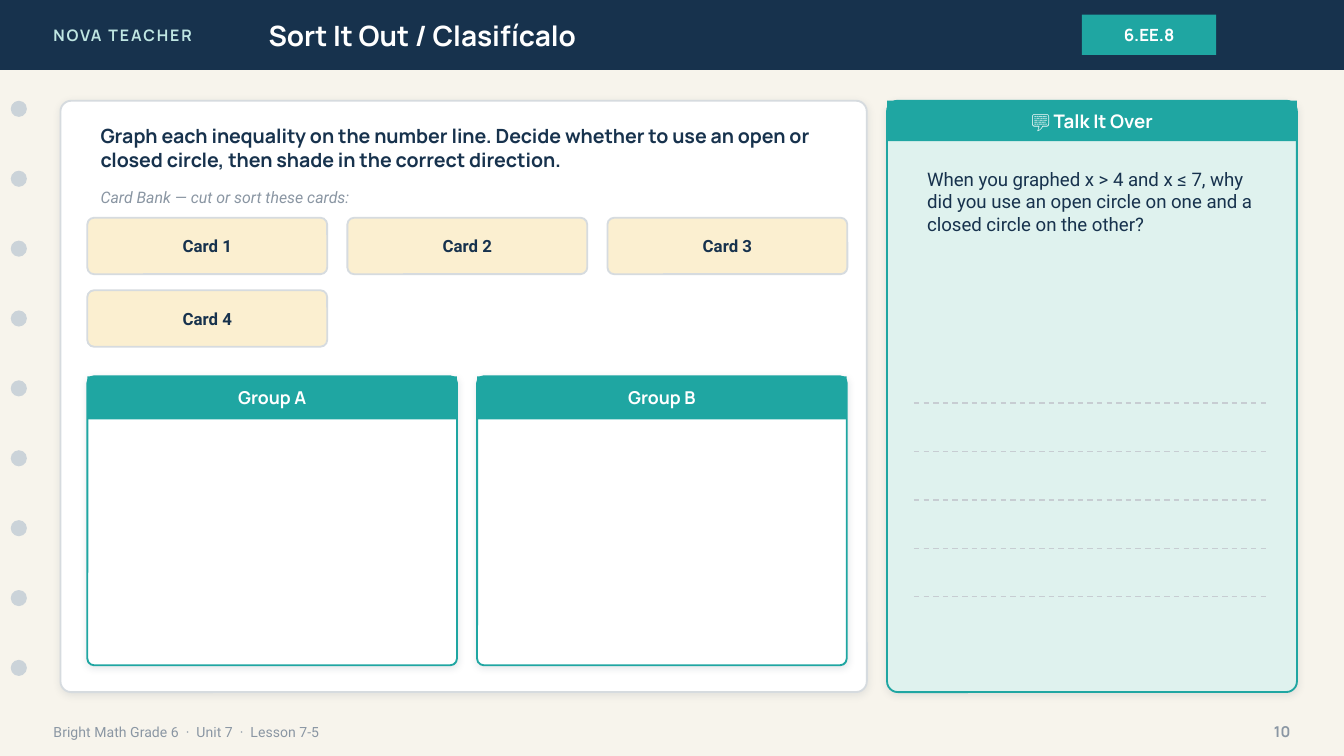
from lxml import etree
from pptx import Presentation
from pptx.dml.color import RGBColor
from pptx.enum.dml import MSO_LINE
from pptx.enum.shapes import MSO_CONNECTOR, MSO_SHAPE
from pptx.enum.text import MSO_ANCHOR, PP_ALIGN
from pptx.oxml import parse_xml
from pptx.oxml.ns import nsdecls, qn
from pptx.util import Pt

PX = 4572  # 200 px to the inch

NAVY = RGBColor(0x17, 0x32, 0x4D)
TEAL = RGBColor(0x1F, 0xA6, 0xA2)
MINT = RGBColor(0xDF, 0xF2, 0xEE)
PALE_TEAL = RGBColor(0xBF, 0xE6, 0xE2)
CREAM = RGBColor(0xF7, 0xF4, 0xEC)
SAND = RGBColor(0xFB, 0xEF, 0xD0)
WHITE = RGBColor(0xFF, 0xFF, 0xFF)
GRAY = RGBColor(0x8A, 0x96, 0xA3)
BORDER = RGBColor(0xD6, 0xDB, 0xDF)
DOT = RGBColor(0xCB, 0xD3, 0xD9)
RULE = RGBColor(0xC7, 0xCD, 0xD2)

HEAD = "Manrope"
BODY = "Roboto"

RECT = MSO_SHAPE.RECTANGLE
ROUND = MSO_SHAPE.ROUNDED_RECTANGLE
OVAL = MSO_SHAPE.OVAL
STRAIGHT = MSO_CONNECTOR.STRAIGHT
DASH = MSO_LINE.DASH
TOP, MIDDLE = MSO_ANCHOR.TOP, MSO_ANCHOR.MIDDLE
LEFT, CENTER, RIGHT = PP_ALIGN.LEFT, PP_ALIGN.CENTER, PP_ALIGN.RIGHT

SHADOW = (
    f'<a:effectLst {nsdecls("a")}>'
    '<a:outerShdw blurRad="50800" dist="12700" dir="5400000" algn="bl" rotWithShape="0">'
    '<a:srgbClr val="1C2E42"><a:alpha val="10000"/></a:srgbClr>'
    '</a:outerShdw></a:effectLst>'
)


def px(*lengths):
    return [n * PX for n in lengths]


def write(sp, text, size, font, color, bold=False, italic=False,
          align=LEFT, anchor=MIDDLE, spacing=0):
    """Put one paragraph in a shape; spacing is between letters, in points."""
    tf = sp.text_frame
    tf.word_wrap = True
    tf.vertical_anchor = anchor
    p = tf.paragraphs[0]
    p.alignment = align
    p.font.size = Pt(size)
    p.font.name = font
    p.font.color.rgb = color
    p.font.bold = bold
    p.font.italic = italic
    r = p.add_run()
    r.text = text
    if spacing:
        r._r.get_or_add_rPr().set("spc", str(spacing * 100))


def add_text(s, box, text, size, font, color, **style):
    write(s.shapes.add_textbox(*px(*box)), text, size, font, color, **style)


def add_block(s, kind, box, fill, line=None, radius=0):
    sp = s.shapes.add_shape(kind, *px(*box))
    sp.shadow.inherit = False
    sp.fill.solid()
    sp.fill.fore_color.rgb = fill
    if line is None:
        sp.line.fill.background()
    else:
        sp.line.color.rgb = line
        sp.line.width = Pt(1)
    if kind == ROUND:
        sp.adjustments[0] = radius / min(box[2:])
    return sp


def add_panel(s, box, fill, line, radius):
    """Rounded block with a soft shadow."""
    sp = add_block(s, ROUND, box, fill, line, radius)
    spPr = sp._element.spPr
    spPr.replace(spPr.find(qn("a:effectLst")), parse_xml(SHADOW))


def add_titled_panel(s, box, fill, radius, title, title_height, size):
    add_panel(s, box, fill, TEAL, radius)
    bar = add_block(s, RECT, (*box[:3], title_height), TEAL)
    write(bar, title, size, HEAD, WHITE, bold=True, align=CENTER)


def add_writing_line(s, x1, x2, y):
    line = s.shapes.add_connector(STRAIGHT, *px(x1, y, x2, y))
    line.line.color.rgb = RULE
    line.line.width = Pt(0.75)
    line.line.dash_style = DASH
    etree.SubElement(line._element.spPr, qn("a:effectLst"))


def add_frame(s):
    """Header band, binder holes and footer."""
    add_block(s, RECT, (0, 0, 2000, 104), NAVY)
    add_text(s, (60, 0, 480, 104), "NOVA TEACHER", 8.5, HEAD, PALE_TEAL, bold=True, spacing=1)
    add_text(s, (380, 0, 1120, 104), "Sort It Out / Clasifícalo", 15, HEAD, WHITE, bold=True)
    badge = add_block(s, RECT, (1610, 22, 200, 60), TEAL)
    write(badge, "6.EE.8", 9, HEAD, WHITE, bold=True, align=CENTER)
    for i in range(9):
        add_block(s, OVAL, (16, 150 + 104 * i, 24, 24), DOT)
    add_text(s, (60, 1061, 1400, 56), "Bright Math Grade 6  ·  Unit 7  ·  Lesson 7-5",
             7.5, BODY, GRAY)
    add_text(s, (1840, 1061, 100, 56), "10", 8, HEAD, GRAY, bold=True, align=RIGHT)


def add_sorting_area(s):
    left, gap, card_width, group_width = 130, 30, 357, 550
    add_panel(s, (90, 150, 1200, 880), WHITE, BORDER, 16)
    add_text(s, (left, 180, 1120, 80),
             "Graph each inequality on the number line. Decide whether to use an open or "
             "closed circle, then shade in the correct direction.",
             10.5, HEAD, NAVY, bold=True)
    add_text(s, (left, 270, 1120, 48), "Card Bank — cut or sort these cards:",
             8.5, BODY, GRAY, italic=True)
    for i in range(4):
        row, col = divmod(i, 3)
        x = left + col * (card_width + gap)
        card = add_block(s, ROUND, (x, 324 + 108 * row, card_width, 84), SAND, BORDER, 10)
        write(card, f"Card {i + 1}", 9, BODY, NAVY, bold=True, align=CENTER)
    for i, name in enumerate("AB"):
        x = left + i * (group_width + gap)
        add_titled_panel(s, (x, 560, group_width, 430), WHITE, 10, f"Group {name}", 64, 9.5)


def add_discussion(s):
    add_titled_panel(s, (1320, 150, 610, 880), MINT, 16, "💬 Talk It Over", 60, 10)
    add_text(s, (1360, 240, 540, 300),
             "When you graphed x > 4 and x ≤ 7, why did you use an open circle on one "
             "and a closed circle on the other?",
             10, BODY, NAVY, anchor=TOP)
    for i in range(5):
        add_writing_line(s, 1360, 1890, 600 + 72 * i)


def main():
    prs = Presentation()
    prs.slide_width, prs.slide_height = px(2000, 1125)
    s = prs.slides.add_slide(prs.slide_layouts[6])
    s.background.fill.solid()
    s.background.fill.fore_color.rgb = CREAM
    add_frame(s)
    add_sorting_area(s)
    add_discussion(s)
    prs.save("out.pptx")


if __name__ == "__main__":
    main()
